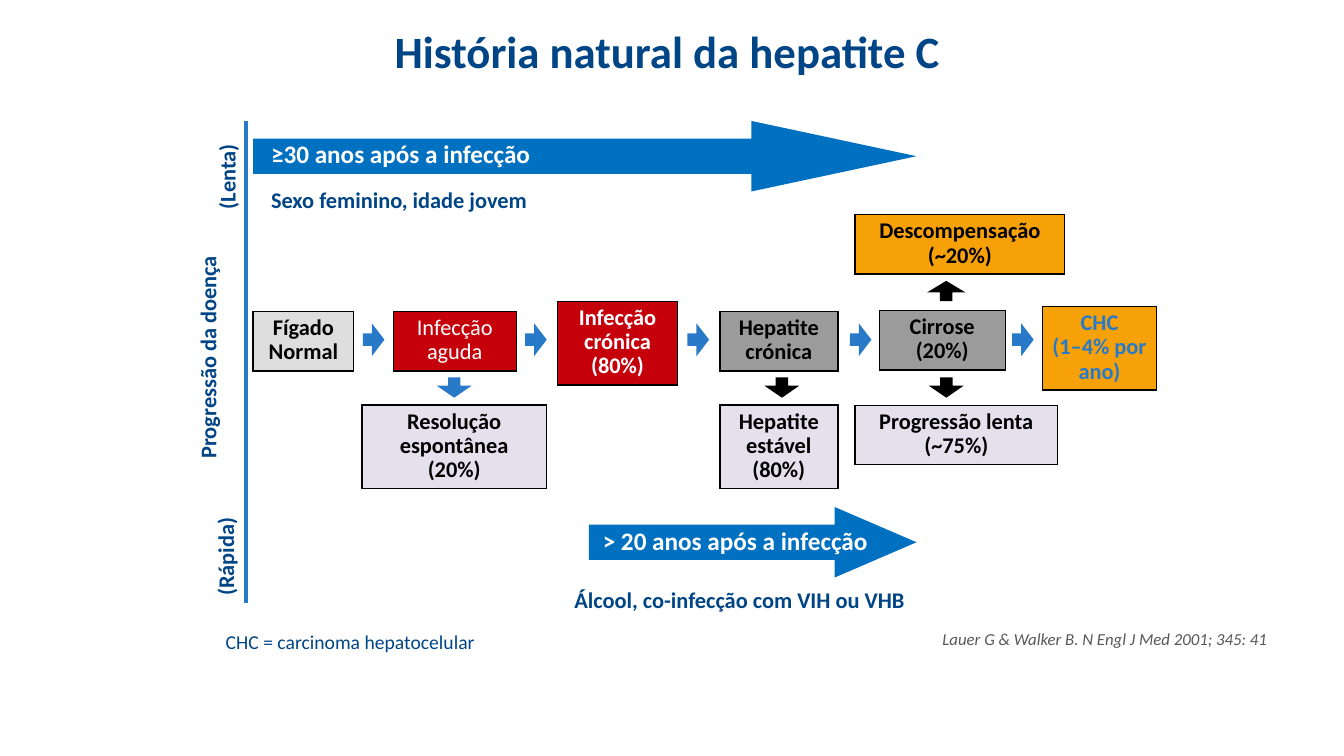
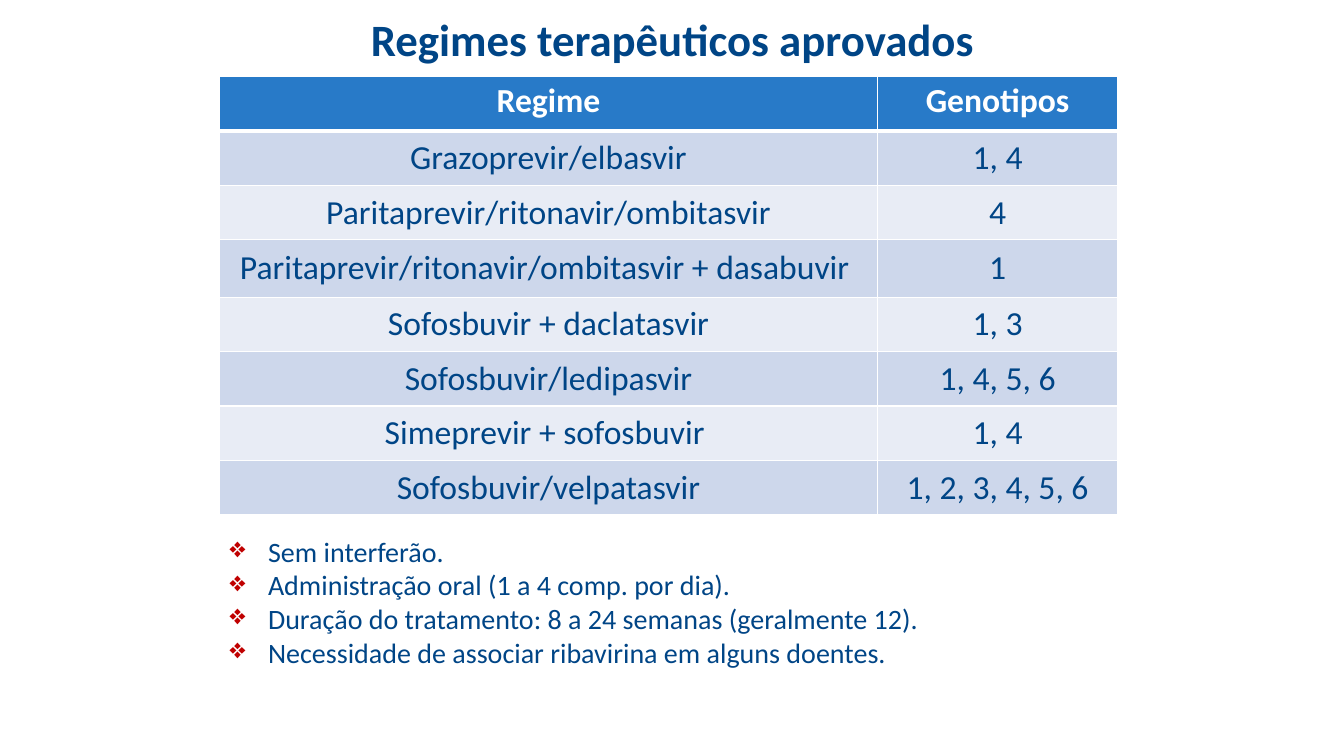
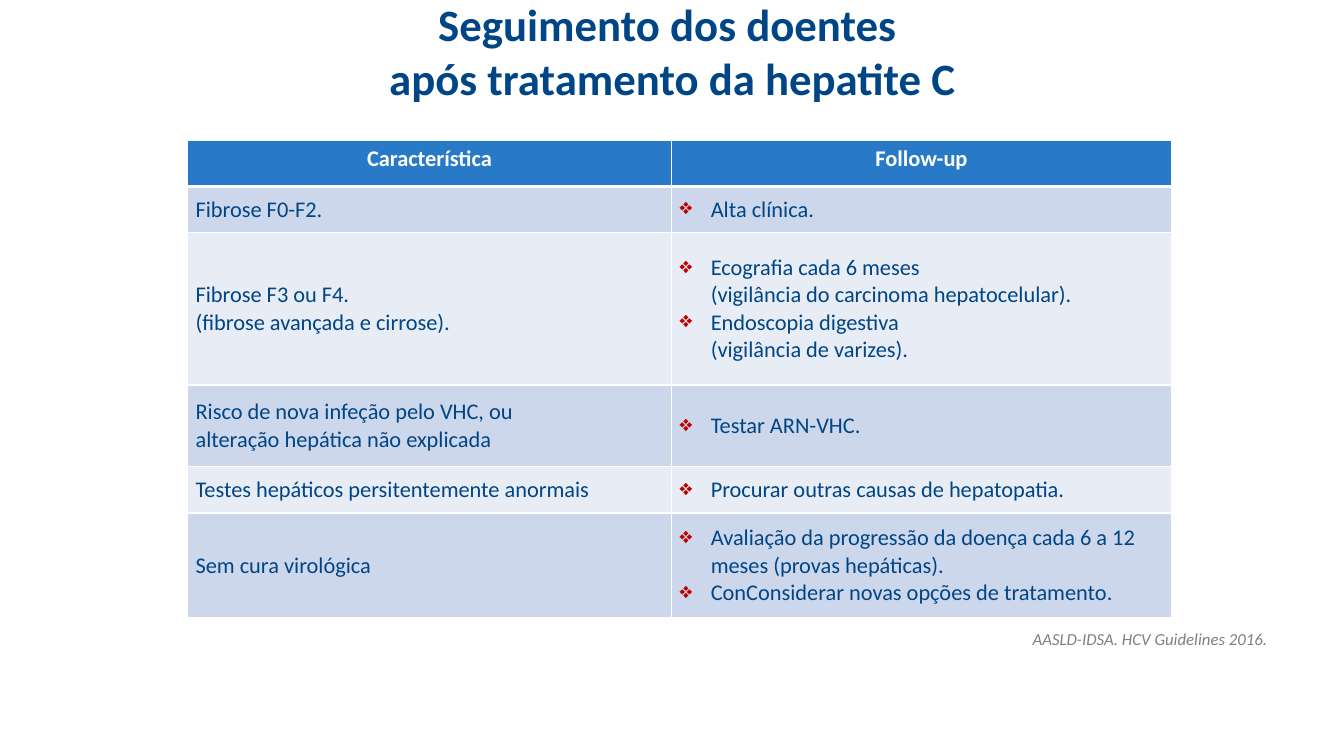
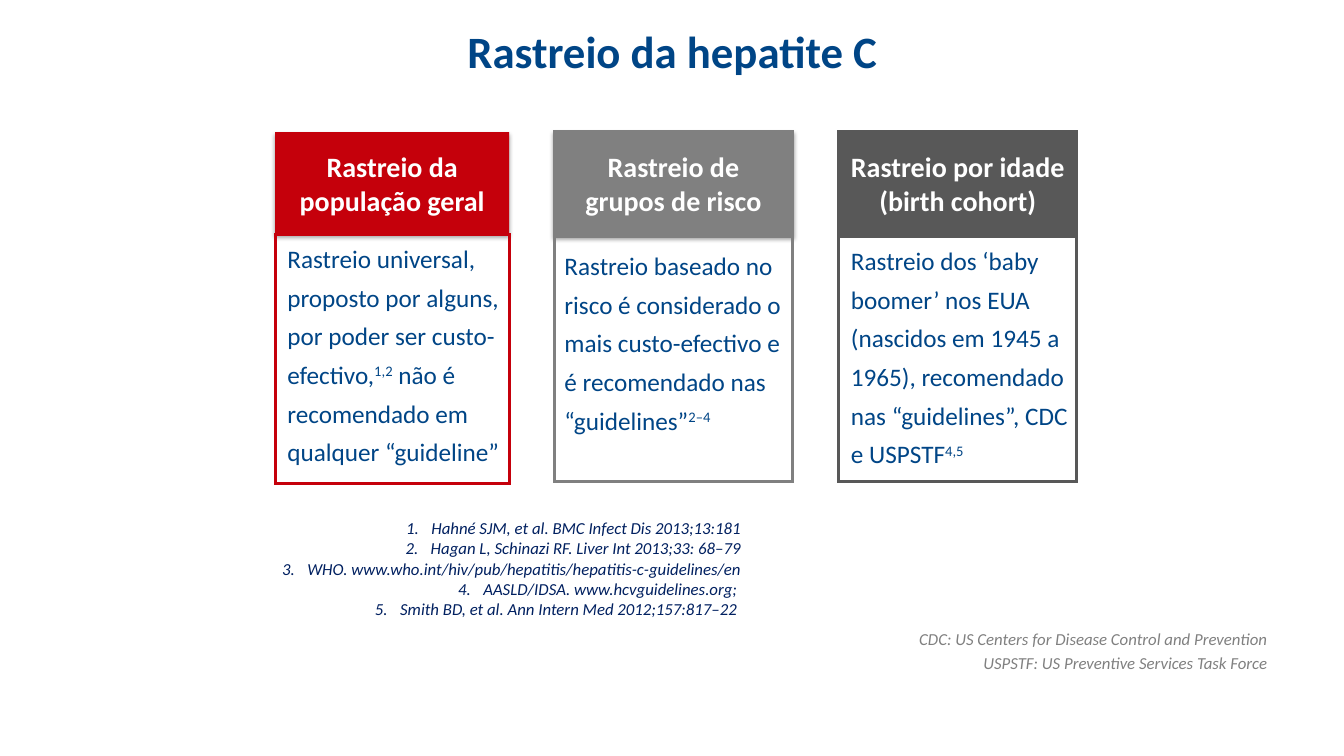
"""Build four slides on hepatitis C: natural history, regimens, follow-up and screening."""
from dataclasses import dataclass

import lxml.etree
import pptx
import pptx.dml.color
import pptx.enum.shapes
import pptx.enum.text
import pptx.oxml.ns
import pptx.util

Inches = pptx.util.Inches
Pt = pptx.util.Pt
qn = pptx.oxml.ns.qn
Shape = pptx.enum.shapes.MSO_SHAPE
Align = pptx.enum.text.PP_ALIGN
Anchor = pptx.enum.text.MSO_ANCHOR

FONT = "Calibri"
COLORS = {
    "navy": "004586", "blue": "287AC8", "arrow": "0070C0", "ink": "002060",
    "red": "C5000B", "bullet": "C00000", "orange": "F6A108", "lilac": "E6E0EC",
    "light": "DEDEDE", "silver": "9B9B9B", "gray": "808080", "dark": "585858",
    "band": "CDD7EB", "pale": "E8ECF5", "white": "FFFFFF", "black": "000000",
}
INSETS = (0.1, 0.05, 0.1, 0.05)


@dataclass(frozen=True)
class Box:
    """Stage of the disease."""
    x: float
    y: float
    w: float
    h: float
    text: str
    fill: str
    color: str = "black"
    bold: bool = True


@dataclass(frozen=True)
class Arrow:
    """Small arrow between two stages."""
    x: float
    y: float
    color: str = "blue"
    rotation: int = 0
    head: float = 0.38


@dataclass(frozen=True)
class Label:
    """Free text on the diagram."""
    x: float
    y: float
    w: float
    h: float
    text: str
    size: int = 16
    color: str = "navy"
    align: Align = Align.LEFT
    rotation: int = 0


@dataclass(frozen=True)
class Card:
    """Screening strategy with a coloured heading."""
    x: float
    w: float
    body_y: float
    body_h: float
    color: str
    heading: str
    text: str
    insets: tuple[float, float, float, float]
    outlined: bool = True
    shadow: bool = True


def rgb(name: str) -> pptx.dml.color.RGBColor:
    """Return a palette colour."""
    return pptx.dml.color.RGBColor.from_string(COLORS[name])


def add_bullet(p, bullet: str, indent: float) -> None:
    """Give a paragraph a hanging bullet or, for "1.", a number."""
    pPr = p._p.get_or_add_pPr()
    pPr.set("marL", str(Inches(indent)))
    pPr.set("indent", str(-Inches(indent)))
    if bullet == "1.":
        lxml.etree.SubElement(pPr, qn("a:buFont"), typeface="+mj-lt")
        lxml.etree.SubElement(pPr, qn("a:buAutoNum"), type="arabicPeriod")
    else:
        clr = lxml.etree.SubElement(pPr, qn("a:buClr"))
        lxml.etree.SubElement(clr, qn("a:srgbClr"), val=COLORS["bullet"])
        lxml.etree.SubElement(pPr, qn("a:buChar"), char=bullet)


def write(tf, text: str | list[str], *, size: float = 16, color: str = "navy",
          bold: bool = False, italic: bool = False, align: Align = Align.LEFT,
          spacing: float | pptx.util.Length | None = None, before: float = 0,
          bullet: str = "", indent: float = 0) -> None:
    """Fill a text frame; a list gives paragraphs and ^marks^ enclose superscripts."""
    for i, line in enumerate([text] if isinstance(text, str) else text):
        p = tf.add_paragraph() if i else tf.paragraphs[0]
        if bullet:
            add_bullet(p, bullet, indent)
        p.alignment = align
        if spacing:
            p.line_spacing = spacing
        if i and before:
            p.space_before = Pt(before)
        for j, part in enumerate(line.split("^")):
            for k, piece in enumerate(part.split("\n")):
                if k:
                    p.add_line_break()
                r = p.add_run()
                r.text = piece
                r.font.name = FONT
                r.font.size = Pt(size)
                r.font.bold = bold
                r.font.italic = italic
                r.font.color.rgb = rgb(color)
                if j % 2:
                    r._r.get_or_add_rPr().set("baseline", "30000")


def set_frame(tf, anchor: Anchor, insets: tuple[float, float, float, float]) -> None:
    """Set wrapping, anchor and insets of a text frame."""
    tf.word_wrap = True
    tf.vertical_anchor = anchor
    tf.margin_left, tf.margin_top, tf.margin_right, tf.margin_bottom = map(Inches, insets)


def add_text(s, x: float, y: float, w: float, h: float, text: str | list[str], *,
             anchor: Anchor = Anchor.TOP, rotation: int = 0, **fmt) -> None:
    """Add a text box."""
    sp = s.shapes.add_textbox(Inches(x), Inches(y), Inches(w), Inches(h))
    sp.rotation = rotation
    set_frame(sp.text_frame, anchor, INSETS)
    write(sp.text_frame, text, **fmt)


def add_shape(s, kind: Shape, x: float, y: float, w: float, h: float, *,
              fill: str = "", line: str = "", width: float = 1,
              anchor: Anchor = Anchor.TOP,
              insets: tuple[float, float, float, float] = INSETS):
    """Add a preset shape without the theme's shadow."""
    sp = s.shapes.add_shape(kind, Inches(x), Inches(y), Inches(w), Inches(h))
    sp.shadow.inherit = False
    if fill:
        sp.fill.solid()
        sp.fill.fore_color.rgb = rgb(fill)
    else:
        sp.fill.background()
    if line:
        sp.line.color.rgb = rgb(line)
        sp.line.width = Pt(width)
        ln = sp._element.spPr.find(qn("a:ln"))
        lxml.etree.SubElement(ln, qn("a:miter"), lim="800000")
    else:
        sp.line.fill.background()
    set_frame(sp.text_frame, anchor, insets)
    return sp


def add_shadow(sp) -> None:
    """Cast a soft shadow below a shape."""
    effects = sp._element.spPr.find(qn("a:effectLst"))
    outer = lxml.etree.SubElement(effects, qn("a:outerShdw"), blurRad=str(Pt(3.1)),
                                  dist=str(Pt(1.8)), dir="5400000", rotWithShape="0")
    clr = lxml.etree.SubElement(outer, qn("a:srgbClr"), val=COLORS["black"])
    lxml.etree.SubElement(clr, qn("a:alpha"), val="35000")


def add_slide(prs, title: str, title_y: float = 0.17):
    """Add a blank slide with its title."""
    s = prs.slides.add_slide(prs.slide_layouts[6])
    add_text(s, 0.67, title_y, 12, 0.66, title, size=32, bold=True,
             align=Align.CENTER, anchor=Anchor.MIDDLE)
    return s


def add_source(s, text: str | list[str], color: str = "gray") -> None:
    """Add the source note at the lower right."""
    add_text(s, 0, 6.19, 12.67, 0.32, text, size=12, color=color, italic=True,
             align=Align.RIGHT, before=2.4)


def add_borders(cell, top: float, bottom: float) -> None:
    """Draw white borders round a cell."""
    tcPr = cell._tc.get_or_add_tcPr()
    for tag, width in (("lnL", 1), ("lnR", 1), ("lnT", top), ("lnB", bottom)):
        ln = lxml.etree.SubElement(tcPr, qn(f"a:{tag}"), w=str(Pt(width)))
        fill = lxml.etree.SubElement(ln, qn("a:solidFill"))
        lxml.etree.SubElement(fill, qn("a:srgbClr"), val=COLORS["white"])


def add_table(s, x: float, y: float, cols: list[float], heights: list[float],
              rows: list[tuple[str | list[str], ...]], *, size: float,
              insets: tuple[float, float], align: Align) -> None:
    """Add a banded table; cells given as lists are bulleted."""
    table = s.shapes.add_table(len(rows), len(cols), Inches(x), Inches(y),
                               Inches(sum(cols)), Inches(sum(heights))).table
    for column, width in zip(table.columns, cols):
        column.width = Inches(width)
    for i, (row, height) in enumerate(zip(rows, heights)):
        table.rows[i].height = Inches(height)
        for j, text in enumerate(row):
            cell = table.cell(i, j)
            add_borders(cell, 3 if i == 1 else 1, 1 if i else 3)
            cell.fill.solid()
            cell.fill.fore_color.rgb = rgb(("band" if i % 2 else "pale") if i else "blue")
            cell.vertical_anchor = Anchor.MIDDLE if i else Anchor.TOP
            cell.margin_left = cell.margin_right = Inches(insets[0])
            cell.margin_top = cell.margin_bottom = Inches(insets[1])
            write(cell.text_frame, text, size=size, bold=i == 0,
                  color="navy" if i else "white", align=align if i else Align.CENTER,
                  bullet="❖" if isinstance(text, list) else "", indent=0.31)


def build_history(prs) -> None:
    """Draw the natural history diagram."""
    s = add_slide(prs, "História natural da hepatite C ")
    add_source(s, "Lauer G & Walker B. N Engl J Med 2001; 345: 41", "dark")
    for b in (
        Box(2.51, 3.09, 1, 0.59, "Fígado\nNormal", "light"),
        Box(3.9, 3.09, 1.22, 0.59, "Infecção aguda", "red", "white", False),
        Box(5.53, 2.99, 1.19, 0.83, "Infecção crónica\n(80%)", "red", "white"),
        Box(7.14, 3.09, 1.17, 0.59, "Hepatite crónica", "silver"),
        Box(3.59, 4.02, 1.83, 0.83, "Resolução espontânea (20%)", "lilac"),
        Box(8.72, 3.08, 1.25, 0.59, "Cirrose (20%)", "silver"),
        Box(10.34, 3.04, 1.13, 0.83, "CHC\n(1–4% por ano)", "orange", "blue"),
        Box(8.48, 2.13, 2.08, 0.59, "Descompensação (~20%)", "orange"),
        Box(8.48, 4.02, 2.01, 0.59, "Progressão lenta (~75%)", "lilac"),
        Box(7.14, 4.02, 1.17, 0.83, "Hepatite estável\n(80%)", "lilac"),
    ):
        sp = add_shape(s, Shape.RECTANGLE, b.x, b.y, b.w, b.h, fill=b.fill, line="black")
        write(sp.text_frame, b.text, color=b.color, bold=b.bold, align=Align.CENTER,
              spacing=0.9)
    for a in (
        *(Arrow(3.64 + 1.61 * i, 3.33) for i in range(5)),
        Arrow(4.45, 3.8, "blue", 90, 0.34),
        Arrow(7.7, 3.8, "black", 90, 0.34),
        Arrow(9.33, 3.8, "black", 90, 0.34),
        Arrow(9.33, 2.85, "black", 270, 0.3),
    ):
        width = 0.11 if a.rotation else 0.12
        sp = add_shape(s, Shape.RIGHT_ARROW, a.x, a.y, width, 0.08, fill=a.color,
                       line=a.color, width=6)
        sp.rotation = a.rotation
        sp.adjustments[1] = a.head
    for x, y, w, head in ((2.51, 1.2, 6.58, 2.34), (5.84, 5.03, 3.25, 1.16)):
        sp = add_shape(s, Shape.RIGHT_ARROW, x, y, w, 0.7, fill="arrow")
        sp.adjustments[1] = head
    axis = s.shapes.add_connector(pptx.enum.shapes.MSO_CONNECTOR.STRAIGHT, Inches(2.44),
                                  Inches(1.2), Inches(2.44), Inches(5.98))
    axis.line.color.rgb = rgb("blue")
    axis.line.width = Pt(2.25)
    lxml.etree.SubElement(axis._element.spPr, qn("a:effectLst"))
    for t in (
        Label(0.4, 3.37, 3.36, 0.35, "Progressão da doença", align=Align.CENTER, rotation=270),
        Label(1.7, 5.28, 1.11, 0.35, "(Rápida)", rotation=270),
        Label(1.76, 1.49, 1.02, 0.35, "(Lenta)", rotation=270),
        Label(5.88, 5.2, 2.92, 0.38, "> 20 anos após a infecção", 18, "white"),
        Label(3.36, 5.8, 7.95, 0.35, "Álcool, co-infecção com VIH ou VHB", align=Align.CENTER),
        Label(2.59, 1.36, 3.33, 0.38, "≥30 anos após a infecção", 18, "white"),
        Label(2.59, 1.83, 3.3, 0.35, "Sexo feminino, idade jovem"),
    ):
        add_text(s, t.x, t.y, t.w, t.h, t.text, size=t.size, color=t.color, bold=True,
                 align=t.align, spacing=0.9, rotation=t.rotation)
    add_text(s, 2.14, 6.2, 4.1, 0.34, "CHC = carcinoma hepatocelular", size=14)


def build_regimens(prs) -> None:
    """List the approved regimens."""
    s = add_slide(prs, "Regimes terapêuticos aprovados", 0.05)
    rows = [
        ("Regime", "Genotipos"),
        ("Grazoprevir/elbasvir", "1, 4"),
        ("Paritaprevir/ritonavir/ombitasvir", "4"),
        ("Paritaprevir/ritonavir/ombitasvir + dasabuvir ", "1"),
        ("Sofosbuvir + daclatasvir", "1, 3"),
        ("Sofosbuvir/ledipasvir", "1, 4, 5, 6"),
        ("Simeprevir + sofosbuvir ", "1, 4"),
        ("Sofosbuvir/velpatasvir", "1, 2, 3, 4, 5, 6"),
    ]
    add_table(s, 2.18, 0.76, [6.52, 2.39], [0.54] * 3 + [0.57] + [0.54] * 4, rows,
              size=24, insets=(0.1, 0.04), align=Align.CENTER)
    sp = add_shape(s, Shape.RECTANGLE, 2.18, 5.25, 8.91, 1.45, fill="white")
    write(sp.text_frame, [
        "Sem interferão.",
        "Administração oral (1 a 4 comp. por dia).",
        "Duração do tratamento: 8 a 24 semanas (geralmente 12).",
        "Necessidade de associar ribavirina em alguns doentes.",
    ], size=20, bullet="❖", indent=0.38)


def build_follow_up(prs) -> None:
    """Tabulate the follow-up after treatment."""
    s = add_slide(prs, "Seguimento dos doentes \napós tratamento da hepatite C")
    add_source(s, "AASLD-IDSA. HCV Guidelines 2016.")
    rows = [
        ("Característica", "Follow-up"),
        ("Fibrose F0-F2.", ["Alta clínica."]),
        ("Fibrose F3 ou F4.\n(fibrose avançada e cirrose).",
         ["Ecografia cada 6 meses\n(vigilância do carcinoma hepatocelular).",
          "Endoscopia digestiva\n(vigilância de varizes)."]),
        ("Risco de nova infeção pelo VHC, ou \nalteração hepática não explicada",
         ["Testar ARN-VHC."]),
        ("Testes hepáticos persitentemente anormais",
         ["Procurar outras causas de hepatopatia."]),
        ("Sem cura virológica",
         ["Avaliação da progressão da doença cada 6 a 12 meses (provas hepáticas).",
          "ConConsiderar novas opções de tratamento."]),
    ]
    add_table(s, 1.86, 1.39, [4.8, 4.96], [0.46, 0.46, 1.51, 0.81, 0.46, 1.04], rows,
              size=16, insets=(0.08, 0.05), align=Align.LEFT)


def build_screening(prs) -> None:
    """Compare the screening strategies."""
    s = add_slide(prs, "Rastreio da hepatite C")
    add_source(s, ["CDC: US Centers for Disease Control and Prevention",
                   "USPSTF: US Preventive Services Task Force"])
    add_text(s, 2.65, 5.09, 4.8, 1.1, [
        "Hahné SJM, et al. BMC Infect Dis 2013;13:181",
        "Hagan L, Schinazi RF. Liver Int 2013;33: 68–79",
        "WHO. www.who.int/hiv/pub/hepatitis/hepatitis-c-guidelines/en",
        "AASLD/IDSA. www.hcvguidelines.org; ",
        "Smith BD, et al. Ann Intern Med 2012;157:817–22 ",
    ], size=12, color="ink", italic=True, align=Align.RIGHT, bullet="1.", indent=0.25)
    flush = (0.12, 0, 0, 0)
    for c in (
        Card(2.73, 2.32, 2.33, 2.47, "red", "Rastreio da população geral",
             "Rastreio universal, proposto por alguns, por poder ser custo-efectivo,^1,2^"
             " não é recomendado em qualquer “guideline”", flush, outlined=False),
        Card(5.5, 2.36, 2.35, 2.43, "gray", "Rastreio de\ngrupos de risco",
             "Rastreio baseado no risco é considerado o mais custo-efectivo e é"
             " recomendado nas “guidelines”^2–4^", INSETS),
        Card(8.32, 2.36, 2.35, 2.43, "dark", "Rastreio por idade\n(birth cohort)",
             "Rastreio dos ‘baby boomer’ nos EUA (nascidos em 1945 a 1965), recomendado"
             " nas “guidelines”, CDC e USPSTF^4,5^", flush, shadow=False),
    ):
        head = add_shape(s, Shape.RECTANGLE, c.x, 1.31, c.w, 1.02, fill=c.color,
                         line=c.color if c.outlined else "", width=2.25,
                         anchor=Anchor.MIDDLE)
        if c.shadow:
            add_shadow(head)
        write(head.text_frame, c.heading, size=20, color="white", bold=True,
              align=Align.CENTER)
        body = add_shape(s, Shape.RECTANGLE, c.x, c.body_y, c.w, c.body_h, line=c.color,
                         width=2.25, insets=c.insets)
        write(body.text_frame, c.text, size=18, spacing=Pt(27.6))


def main() -> None:
    """Build and save the presentation."""
    prs = pptx.Presentation()
    prs.slide_width = Inches(13.33)
    prs.slide_height = Inches(7.5)
    for build in (build_history, build_regimens, build_follow_up, build_screening):
        build(prs)
    prs.save("out.pptx")


if __name__ == "__main__":
    main()
